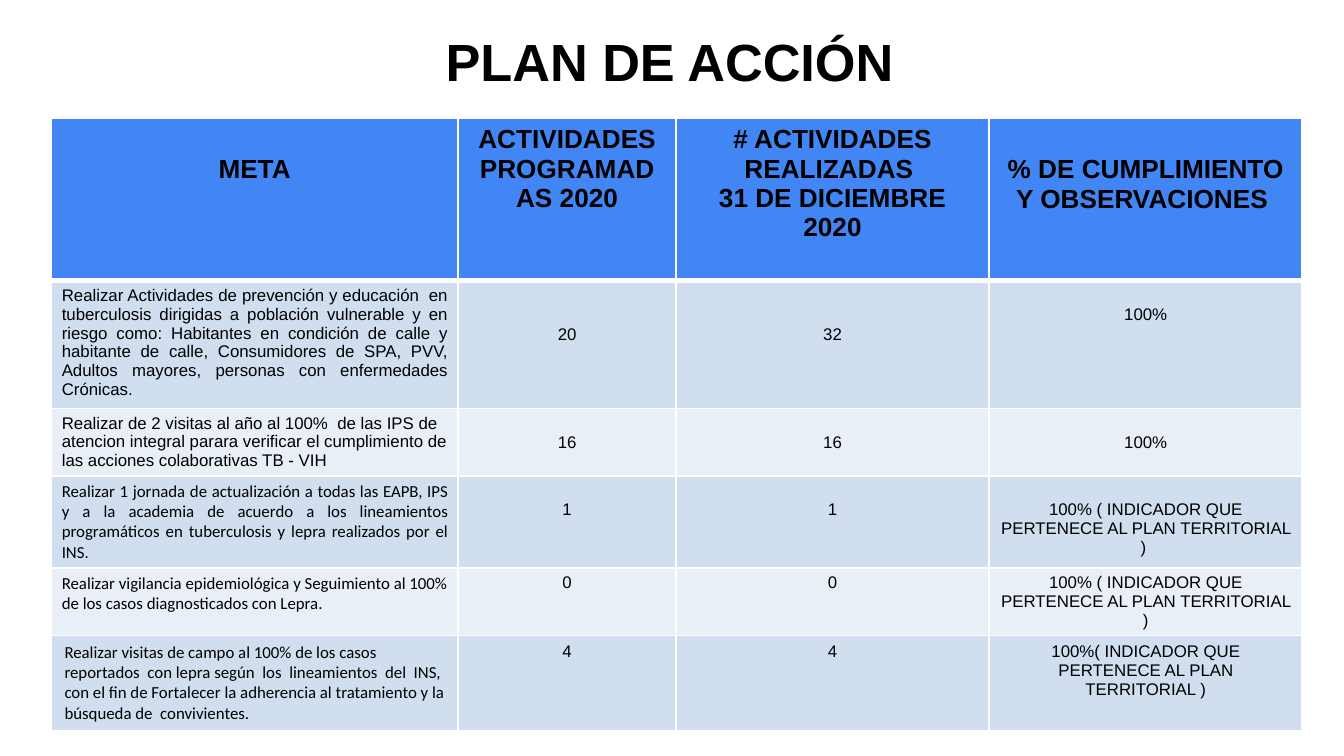
"""Build the slide with the 2020 action plan table."""
from lxml import etree
from pptx import Presentation
from pptx.dml.color import RGBColor
from pptx.enum.text import MSO_ANCHOR, PP_ALIGN
from pptx.oxml.ns import qn
from pptx.util import Inches, Pt

LEFT, MID, JUST = PP_ALIGN.LEFT, PP_ALIGN.CENTER, PP_ALIGN.JUSTIFY
MIDDLE = MSO_ANCHOR.MIDDLE
COLORS = {"ink": "000000", "line": "FFFFFF", "head": "4285F4",
          "odd": "D0DEEF", "even": "E9EFF7"}
WIDTHS = [3.03, 1.62, 2.33, 2.33]
HEIGHTS = [1.21, 0.95, 0.5, 0.68, 0.5, 0.71]
HEAD = [("META", 1), ("ACTIVIDADES PROGRAMADAS 2020", 0),
        ("# ACTIVIDADES REALIZADAS \n31 DE DICIEMBRE 2020", 0),
        ("% DE CUMPLIMIENTO\nY OBSERVACIONES ", 1)]
NOTE = "( INDICADOR QUE PERTENECE AL PLAN TERRITORIAL )"
GOALS = [
    ("Realizar Actividades de prevención y educación  en tuberculosis dirigidas a "
     "población vulnerable y en riesgo como: Habitantes en condición de calle y "
     "habitante de calle, Consumidores de SPA, PVV, Adultos mayores, personas con "
     "enfermedades Crónicas. ", JUST, "Arial", ("20", 2), ("32", 2), ("100%", 1)),
    ("Realizar de 2 visitas al año al 100%  de las IPS de atencion integral parara "
     "verificar el cumplimiento de las acciones colaborativas TB - VIH",
     LEFT, "Arial", ("16", 1), ("16", 1), ("100%", 1)),
    ("Realizar 1 jornada de actualización a todas las EAPB, IPS y a la academia de "
     "acuerdo a los lineamientos programáticos en tuberculosis y lepra realizados "
     "por el INS. ", JUST, "Calibri", ("1", 1), ("1", 1), (f"100% {NOTE} ", 1)),
    ("Realizar vigilancia epidemiológica y Seguimiento al 100% de los casos "
     "diagnosticados con Lepra.",
     LEFT, "Calibri", ("0", 0), ("0", 0), (f"100% {NOTE}", 0)),
    ("Realizar visitas de campo al 100% de los casos reportados  con lepra según  "
     "los  lineamientos  del  INS, con el fin de Fortalecer la adherencia al "
     "tratamiento y la búsqueda de  convivientes.",
     LEFT, "Calibri", ("4", 0), ("4", 0), (f"100%{NOTE}", 0)),
]


class Deck:
    """Hold the style and the current slide."""

    def __init__(self):
        self.prs = Presentation()
        self.prs.slide_width, self.prs.slide_height = Inches(10), Inches(10 * 9 / 16)
        self.slide = self.prs.slides.add_slide(self.prs.slide_layouts[5])

    def style(self, frame, size, bold=False, font="Arial", align=MID):
        """Format every paragraph and run of a text frame."""
        for para in frame.paragraphs:
            para.alignment = align
            for run in para.runs:
                run.font.size, run.font.bold, run.font.name = Pt(size), bold, font
                run.font.color.rgb = RGBColor.from_string(COLORS["ink"])

    def title(self, text, left, top, width, height):
        """Place the title."""
        box = self.slide.shapes.title
        box.left, box.top = Inches(left), Inches(top)
        box.width, box.height = Inches(width), Inches(height)
        frame = box.text_frame
        frame.text, frame.vertical_anchor = text, MIDDLE
        frame.margin_left = frame.margin_right = Inches(0.07)
        frame.margin_top = frame.margin_bottom = Inches(0.04)
        frame.paragraphs[0].line_spacing = 0.9
        self.style(frame, 28, True)

    def table(self, left, top, widths, heights):
        """Add an empty table sized by its columns and rows."""
        grid = self.slide.shapes.add_table(
            len(heights), len(widths), Inches(left), Inches(top),
            Inches(sum(widths)), Inches(sum(heights))).table
        for col, width in zip(grid.columns, widths):
            col.width = Inches(width)
        for row, height in zip(grid.rows, heights):
            row.height = Inches(height)
        return grid

    def border(self, cell, sides):
        """Draw the cell borders, given as widths in points by side."""
        props = cell._tc.get_or_add_tcPr()
        for side, width in sides.items():
            line = etree.SubElement(props, qn(f"a:ln{side}"), w=str(Pt(width)))
            fill = etree.SubElement(line, qn("a:solidFill"))
            etree.SubElement(fill, qn("a:srgbClr"), val=COLORS["line"])

    def cell(self, cell, text, fill, size, drop=0, pad=(0.1, 0.05), sides=None, **look):
        """Fill one cell, its text lowered by a number of lines."""
        self.border(cell, {"L": 1, "R": 1, "T": 1, "B": 1} | (sides or {}))
        cell.fill.solid()
        cell.fill.fore_color.rgb = RGBColor.from_string(COLORS[fill])
        side, edge = pad
        cell.margin_left = cell.margin_right = Inches(side)
        cell.margin_top = Inches(edge + drop * size * 1.15 / 72)
        cell.margin_bottom = Inches(edge)
        cell.text_frame.text = text
        self.style(cell.text_frame, size, **look)


def main():
    deck = Deck()
    deck.title("PLAN DE ACCIÓN ", 1.8, 0.07, 6.47, 0.82)
    grid = deck.table(0.38, 0.88, WIDTHS, HEIGHTS)
    for col, (text, drop) in enumerate(HEAD):
        deck.cell(grid.cell(0, col), text, "head", 14, drop, sides={"B": 3}, bold=True)
    for row, (goal, align, font, *facts) in enumerate(GOALS, 1):
        fill = "odd" if row % 2 else "even"
        pad = (0.1, 0.05) if row == len(GOALS) else (0.08, 0.04)
        sides = {"T": 3} if row == 1 else {}
        deck.cell(grid.cell(row, 0), goal, fill, 9, 0, pad, sides, font=font, align=align)
        for col, (text, drop) in enumerate(facts, 1):
            deck.cell(grid.cell(row, col), text, fill, 9, drop, pad, sides)
    deck.prs.save("out.pptx")


if __name__ == "__main__":
    main()
